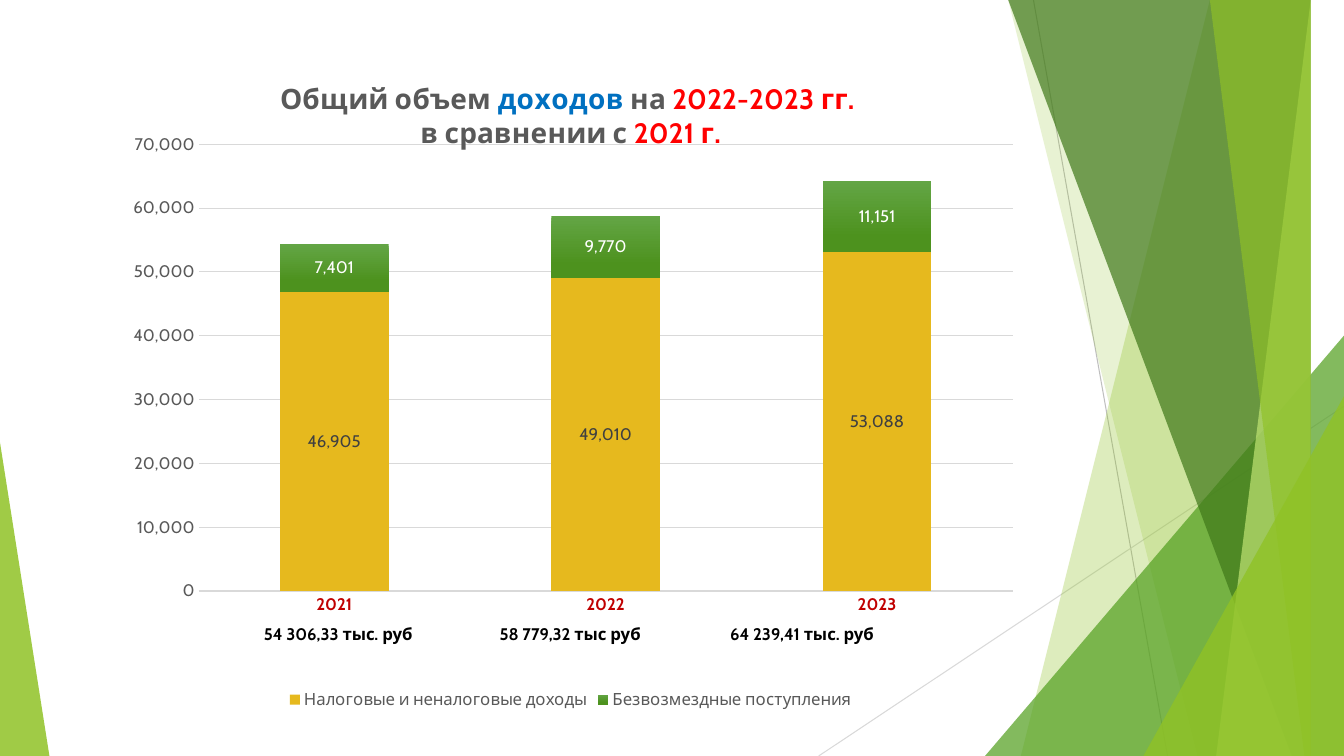
from dataclasses import dataclass

from lxml import etree
from pptx import Presentation
from pptx import util as u
from pptx.chart.data import CategoryChartData
from pptx.dml.color import RGBColor
from pptx.enum import chart as ch
from pptx.enum import shapes, text
from pptx.oxml.ns import qn

FONT = "Cabin"
LIME = RGBColor(0x90, 0xC2, 0x26)
GREEN = RGBColor(0x54, 0xA0, 0x21)
DARK = RGBColor(0x3F, 0x78, 0x19)
PALE = RGBColor(0xC0, 0xE4, 0x74)
GRAY = RGBColor(0xBF, 0xBF, 0xBF)
RULE = RGBColor(0xD9, 0xD9, 0xD9)
GOLD = RGBColor(0xE6, 0xB9, 0x1E)
LEAF = RGBColor(0x63, 0xA5, 0x45)
MOSS = RGBColor(0x4D, 0x92, 0x1E)
BODY = RGBColor(0x59, 0x59, 0x59)
INK = RGBColor(0x40, 0x40, 0x40)
BLACK = RGBColor(0, 0, 0)
WHITE = RGBColor(0xFF, 0xFF, 0xFF)
BLUE = RGBColor(0x00, 0x70, 0xC0)
RED = RGBColor(0xFF, 0, 0)
WINE = RGBColor(0xC0, 0, 0)

WIDE, HIGH = 13.33, 7.5


@dataclass
class Ray:
    start: tuple[float, float]
    end: tuple[float, float]
    color: RGBColor


@dataclass
class Band:
    """Full-height shape running to the right edge, with a slanted left side."""
    top: float
    foot: float
    color: RGBColor
    alpha: int


@dataclass
class Wedge:
    """Right triangle standing on the bottom edge; peak is 0 (left) or 1 (right)."""
    left: float
    top: float
    width: float
    peak: int
    color: RGBColor
    alpha: int


@dataclass
class Part:
    name: str
    vals: tuple[int, ...]
    ink: RGBColor


@dataclass
class Span:
    text: str
    color: RGBColor


RAYS = [Ray((10.25, 0), (11.58, HIGH), GRAY),
        Ray((WIDE, 4.03), (8.12, HIGH), RULE)]
DECOR = [
    Band(12.28, 10.04, LIME, 30),
    Band(10.5, 11.83, LIME, 20),
    Wedge(9.77, 3.33, 3.56, 1, GREEN, 72),
    Band(10.21, 12.91, DARK, 70),
    Band(13.03, 11.92, PALE, 70),
    Band(11.96, 13.18, LIME, 65),
    Wedge(11.34, 3.93, 1.99, 1, LIME, 80),
    Wedge(0, 4.39, 0.49, 0, LIME, 85),
]
YEARS = ("2021", "2022", "2023")
PARTS = [Part("Налоговые и неналоговые доходы", (46905, 49010, 53088), INK),
         Part("Безвозмездные поступления", (7401, 9770, 11151), WHITE)]
TITLE = [
    [Span("Общий объем ", BODY), Span("доходов", BLUE),
     Span(" на ", BODY), Span("2022-2023 гг. ", RED)],
    [Span("в сравнении с ", BODY), Span("2021 г.", RED)],
]
TOTALS = ("54 306,33 тыс. руб", "58 779,32 тыс руб", "64 239,41 тыс. руб")
PLOT = {"x": 0.118, "y": 0.131, "w": 0.836, "h": 0.682}


def style(font, size: float, color: RGBColor, bold: bool = False) -> None:
    font.name, font.size, font.bold = FONT, u.Pt(size), bold
    font.color.rgb = color


def add_ray(slide, ray: Ray) -> None:
    line = slide.shapes.add_connector(
        shapes.MSO_CONNECTOR.STRAIGHT,
        *(u.Inches(v) for v in ray.start + ray.end))
    line.line.color.rgb = ray.color
    line.line.width = u.Pt(0.75)
    etree.SubElement(line._element.spPr, qn("a:effectLst"))


def add_decor(slide, item: Band | Wedge) -> None:
    if isinstance(item, Band):
        pen = slide.shapes.build_freeform(item.top, 0, scale=u.Inches(1))
        pen.add_line_segments([(WIDE, 0), (WIDE, HIGH), (item.foot, HIGH)])
        shape = pen.convert_to_shape()
    else:
        box = (item.left, item.top, item.width, HIGH - item.top)
        shape = slide.shapes.add_shape(
            shapes.MSO_SHAPE.ISOSCELES_TRIANGLE, *(u.Inches(v) for v in box))
        shape.adjustments[0] = item.peak
    shape.shadow.inherit = False
    shape.line.fill.background()
    shape.fill.solid()
    shape.fill.fore_color.rgb = item.color
    tint = shape._element.spPr.find(".//" + qn("a:srgbClr"))
    etree.SubElement(tint, qn("a:alpha"), val=str(item.alpha * 1000))


def place_plot(chart) -> None:
    """Fix the inner plot area as fractions of the chart."""
    area = chart._chartSpace.chart.plotArea
    for old in area.findall(qn("c:layout")):
        area.remove(old)
    layout = etree.Element(qn("c:layout"))
    area.insert(0, layout)
    manual = etree.SubElement(layout, qn("c:manualLayout"))
    rules = {"layoutTarget": "inner", "xMode": "edge", "yMode": "edge", **PLOT}
    for key, val in rules.items():
        etree.SubElement(manual, qn(f"c:{key}"), val=str(val))


def add_title(chart) -> None:
    frame = chart.chart_title.text_frame
    for i, spans in enumerate(TITLE):
        para = frame.add_paragraph() if i else frame.paragraphs[0]
        para.alignment = text.PP_ALIGN.CENTER
        for span in spans:
            run = para.add_run()
            run.text = span.text
            style(run.font, 20, span.color, True)
    chart.chart_title.include_in_layout = True


def format_axes(chart) -> None:
    cats, vals = chart.category_axis, chart.value_axis
    for axis in (cats, vals):
        axis.major_tick_mark = axis.minor_tick_mark = ch.XL_TICK_MARK.NONE
    style(cats.tick_labels.font, 12, WINE, True)
    cats.format.line.color.rgb = RULE
    cats.format.line.width = u.Pt(1)
    style(vals.tick_labels.font, 12, BODY)
    vals.tick_labels.number_format = "#,##0"
    vals.tick_labels.number_format_is_linked = False
    vals.minimum_scale, vals.maximum_scale, vals.major_unit = 0, 70000, 10000
    vals.format.line.fill.background()
    vals.major_gridlines.format.line.color.rgb = RULE
    vals.major_gridlines.format.line.width = u.Pt(0.75)


def add_chart(slide) -> None:
    data = CategoryChartData(number_format="#,##0")
    data.categories = YEARS
    for part in PARTS:
        data.add_series(part.name, part.vals)
    box = (u.Inches(v) for v in (0.83, 0.58, 9.66, 6.5))
    chart = slide.shapes.add_chart(
        ch.XL_CHART_TYPE.COLUMN_STACKED, *box, data).chart
    style(chart.font, 10, BLACK)
    add_title(chart)
    place_plot(chart)
    format_axes(chart)
    chart.has_legend = True
    chart.legend.position = ch.XL_LEGEND_POSITION.BOTTOM
    chart.legend.include_in_layout = False
    style(chart.legend.font, 12, BODY)

    plot = chart.plots[0]
    plot.gap_width, plot.overlap, plot.vary_by_categories = 150, 100, False
    for part, bars in zip(PARTS, plot.series):
        bars.invert_if_negative = False
        labels = bars.data_labels
        labels.show_value = True
        labels.position = ch.XL_LABEL_POSITION.CENTER
        style(labels.font, 12, part.ink)
    tax, grants = (bars.format.fill for bars in plot.series)
    tax.solid()
    tax.fore_color.rgb = GOLD
    grants.gradient()
    grants.gradient_angle = 270
    for stop, color, pos in zip(grants.gradient_stops, (LEAF, MOSS), (0, 0.78)):
        stop.color.rgb, stop.position = color, pos


def add_total(slide, col: int, total: str) -> None:
    box = (2.45 + 2.3 * col, 6.14, 1.81, 0.3)
    frame = slide.shapes.add_textbox(*(u.Inches(v) for v in box)).text_frame
    frame.word_wrap = True
    frame.auto_size = text.MSO_AUTO_SIZE.SHAPE_TO_FIT_TEXT
    para = frame.paragraphs[0]
    para.alignment = text.PP_ALIGN.CENTER
    run = para.add_run()
    run.text = total
    style(run.font, 12, BLACK, True)


def main() -> None:
    deck = Presentation()
    deck.slide_width, deck.slide_height = u.Inches(WIDE), u.Inches(HIGH)
    slide = deck.slides.add_slide(deck.slide_layouts[6])
    for ray in RAYS:
        add_ray(slide, ray)
    for item in DECOR:
        add_decor(slide, item)
    add_chart(slide)
    for col, total in enumerate(TOTALS):
        add_total(slide, col, total)
    deck.save("out.pptx")


if __name__ == "__main__":
    main()
